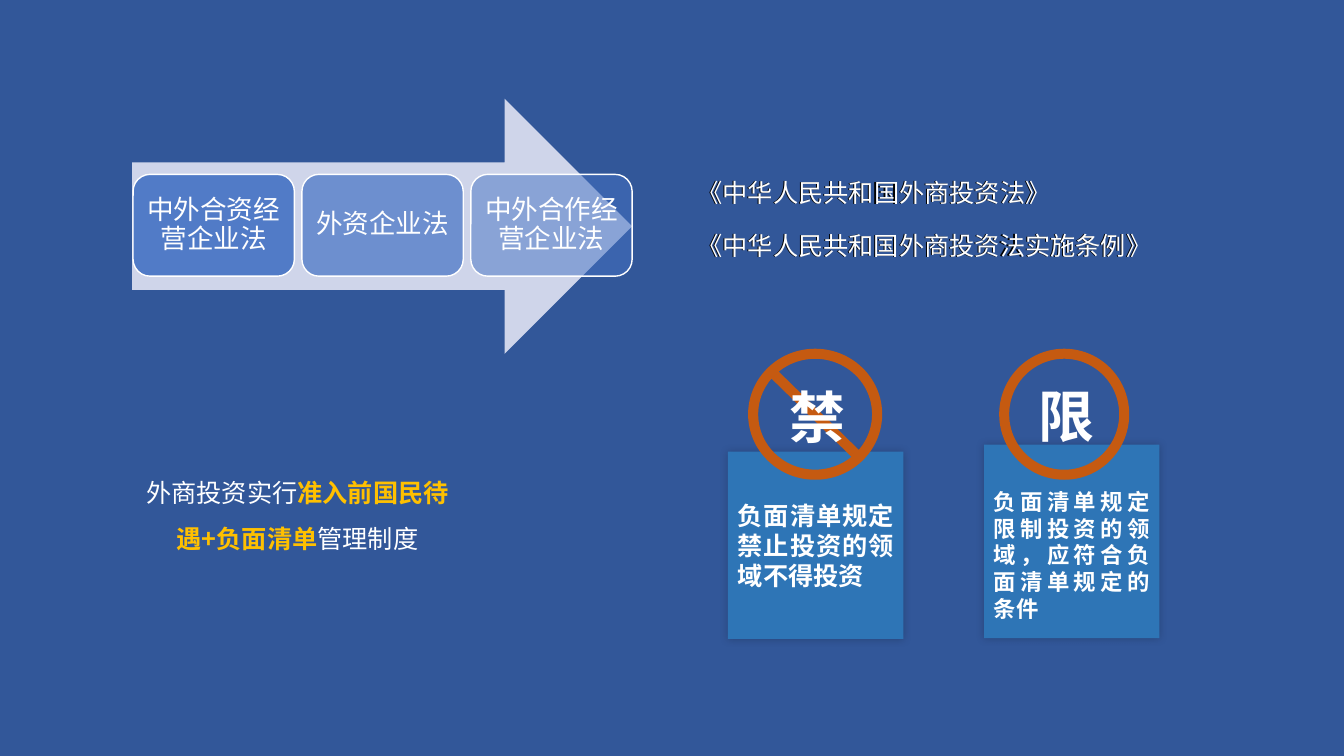
import pptx
import pptx.util
import pptx.dml.color
import pptx.enum.shapes
import pptx.enum.text
import pptx.oxml
import pptx.oxml.ns

Inches, Pt = pptx.util.Inches, pptx.util.Pt
RGBColor = pptx.dml.color.RGBColor
SHAPE = pptx.enum.shapes.MSO_SHAPE
ALIGN = pptx.enum.text.PP_ALIGN
ANCHOR = pptx.enum.text.MSO_ANCHOR
qn = pptx.oxml.ns.qn

FONT = "Noto Sans CJK SC"
NAVY = RGBColor(0x32, 0x57, 0x99)
PALE = RGBColor(0xCF, 0xD5, 0xEA)
BLUE = RGBColor(0x44, 0x72, 0xC4)
CARD_BLUE = RGBColor(0x2E, 0x75, 0xB6)
ORANGE = RGBColor(0xC5, 0x5A, 0x11)
GOLD = RGBColor(0xFF, 0xC0, 0x00)
WHITE = RGBColor(0xFF, 0xFF, 0xFF)
BLACK = RGBColor(0, 0, 0)

# Content: lengths in inches, sizes in points
OLD_LAWS = [("中外合资经营企业法", 90), ("外资企业法", 70), ("中外合作经营企业法", 50)]
NEW_LAWS = [("《中华人民共和国外商投资法》", 1.71, 4.51),
            ("《中华人民共和国外商投资法实施条例》", 2.24, 4.86)]
SYSTEM = [("外商投资实行", WHITE, False),
          ("准入前国民待遇+负面清单", GOLD, True),
          ("管理制度", WHITE, False)]
# rule, size, top inset, card box, sign, sign box, character, character position
RULES = [
    ("负面清单规定限制投资的领域，应符合负面清单规定的条件", 16, 0.32,
     (9.76, 4.41, 1.74, 1.92), SHAPE.DONUT, (9.91, 3.46, 1.29, 1.3), "限", (10.2, 3.74)),
    ("负面清单规定禁止投资的领域不得投资", 18, 0.05,
     (7.22, 4.48, 1.74, 1.86), SHAPE.NO_SYMBOL, (7.42, 3.46, 1.33, 1.3), "禁", (7.73, 3.75)),
]

deck = pptx.Presentation()
deck.slide_width, deck.slide_height = Inches(13.33), Inches(7.5)
slide = deck.slides.add_slide(deck.slide_layouts[6])
slide.background.fill.solid()
slide.background.fill.fore_color.rgb = NAVY


def add_filled(kind, box, color):
    shape = slide.shapes.add_shape(kind, *map(Inches, box))
    shape.shadow.inherit = False
    shape.fill.solid()
    shape.fill.fore_color.rgb = color
    shape.line.fill.background()
    return shape


def write(shape, runs, size, align=ALIGN.LEFT):
    """Write (text, color, bold) runs into the first paragraph."""
    shape.text_frame.word_wrap = True
    paragraph = shape.text_frame.paragraphs[0]
    paragraph.alignment = align
    for text, color, bold in runs:
        run = paragraph.add_run()
        run.text = text
        run.font.name, run.font.size = FONT, Pt(size)
        run.font.bold, run.font.color.rgb = bold, color
        east_asian = pptx.oxml.parse_xml(
            f'<a:ea {pptx.oxml.ns.nsdecls("a")} typeface="{FONT}"/>')
        run.font._element.find(qn("a:latin")).addnext(east_asian)
    return paragraph


def add_text(box, runs, size, align=ALIGN.LEFT):
    return write(slide.shapes.add_textbox(*map(Inches, box)), runs, size, align)


# Cards with a soft shadow
for rule, size, top_inset, card_box, *_ in RULES:
    card = add_filled(SHAPE.RECTANGLE, card_box, CARD_BLUE)
    effects = card._element.spPr.find(qn("a:effectLst"))
    effects.append(pptx.oxml.parse_xml(
        f'<a:outerShdw {pptx.oxml.ns.nsdecls("a")} blurRad="{Pt(6)}" dist="0" dir="18900000">'
        '<a:srgbClr val="000000"><a:alpha val="20000"/></a:srgbClr></a:outerShdw>'))
    card.text_frame.vertical_anchor = ANCHOR.MIDDLE
    card.text_frame.margin_top = Inches(top_inset)
    write(card, [(rule, WHITE, True)], size, ALIGN.JUSTIFY)

# Management system statement
add_text((1.31, 4.54, 3.28, 0.96), SYSTEM, 18, ALIGN.CENTER).line_spacing = 1.5

# Signs over the cards, each with its character
for *_, sign_kind, sign_box, character, (left, top) in RULES:
    sign = add_filled(sign_kind, sign_box, ORANGE)
    sign.adjustments[0] = 0.077
    add_text((left, top, 1.19, 0.77), [(character, WHITE, True)], 40)

# Arrow with the three earlier laws
add_filled(SHAPE.RIGHT_ARROW, (1.31, 0.98, 4.96, 2.53), PALE)
FIRST_LEFT, LAST_LEFT = 1.32, 4.67
step = (LAST_LEFT - FIRST_LEFT) / (len(OLD_LAWS) - 1)
for i, (law, opacity) in enumerate(OLD_LAWS):
    stage = add_filled(SHAPE.ROUNDED_RECTANGLE, (FIRST_LEFT + i * step, 1.73, 1.6, 1.01), BLUE)
    stage_color = stage._element.spPr.find(qn("a:solidFill")).find(qn("a:srgbClr"))
    stage_color.append(pptx.oxml.parse_xml(
        f'<a:alpha {pptx.oxml.ns.nsdecls("a")} val="{opacity * 1000}"/>'))
    stage.line.color.rgb, stage.line.width = WHITE, Pt(1)
    frame = stage.text_frame
    frame.vertical_anchor = ANCHOR.MIDDLE
    frame.margin_left = frame.margin_right = Inches(0.08)
    frame.margin_top = frame.margin_bottom = Inches(0.08)
    write(stage, [(law, WHITE, False)], 19, ALIGN.CENTER).line_spacing = 0.9

# Current laws: white lettering over a black edge
for left, color in [(6.81, BLACK), (6.82, WHITE)]:
    for law, top, width in NEW_LAWS:
        add_text((left, top, width, 0.4), [(law, color, False)], 18)

deck.save("out.pptx")
